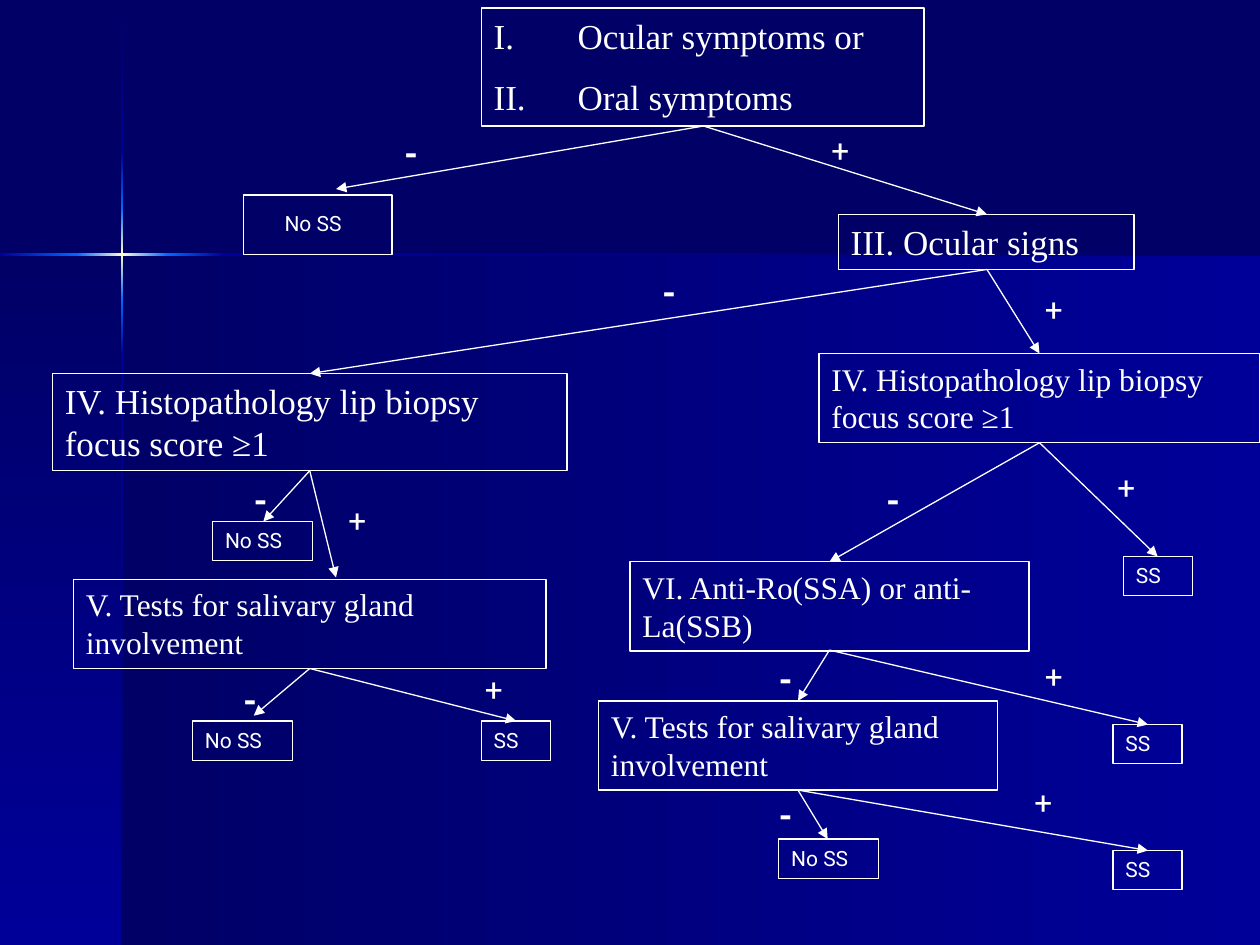
from itertools import pairwise

from lxml.etree import SubElement
from pptx import Presentation
from pptx.dml.color import RGBColor
from pptx.enum.shapes import MSO_CONNECTOR, MSO_SHAPE
from pptx.enum.text import MSO_ANCHOR, PP_ALIGN
from pptx.oxml.ns import qn
from pptx.util import Pt

WHITE = RGBColor(0xFF, 0xFF, 0xFF)
NAVY = RGBColor(0x00, 0x00, 0x66)
BLUE = RGBColor(0x00, 0x00, 0x99)
AZURE = RGBColor(0x00, 0x66, 0xFF)
CREAM = RGBColor(0xFF, 0xFF, 0xCC)

SERIF = "Times New Roman"
SANS = "Roboto"

RIGHTWARD = 0
DOWNWARD = 270
BEAM_WIDTH = 1.4
VERTICAL_BEAM = [
    (0.7, NAVY), (87, BLUE), (119, AZURE), (145, CREAM),
    (171.5, AZURE), (203, BLUE), (540, NAVY),
]
HORIZONTAL_BEAM = [
    (0, BLUE), (44, AZURE), (70, CREAM),
    (96, AZURE), (127.5, BLUE), (720, NAVY),
]

CRITERIA = [
    ("III. Ocular signs", 20, (479, 122.5, 169, 31.5)),
    ("IV. Histopathology lip biopsy focus score ≥1", 18, (468, 202, 252, 51)),
    ("IV. Histopathology lip biopsy focus score ≥1", 20, (30, 213.5, 294, 55.5)),
    ("V. Tests for salivary gland involvement", 18, (42, 331, 270, 51)),
    ("VI. Anti-Ro(SSA) or anti-La(SSB)", 18, (360, 321, 228, 51)),
    ("V. Tests for salivary gland involvement", 18, (342, 400.5, 228, 51)),
]

OUTCOMES = [
    ("SS", 39.5, [(642, 318), (636, 414), (636, 486), (275, 412)]),
    ("No SS", 57, [(121.5, 298), (445, 479.5), (110, 412)]),
]

BRANCHES = [
    ((402, 72), (192, 108), (564, 122.5), (224, 71.5), (468, 71.5)),
    ((564, 154), (177, 213.5), (594, 202), (371.5, 151), (590, 162)),
    ((177, 269), (150.5, 298), (192, 330), (138, 270), (192, 283)),
    ((594, 253), (474, 321), (661.5, 318), (499.5, 270), (631.5, 264)),
    ((474, 371.5), (456, 400.5), (656, 414), (438, 372), (590, 372)),
    ((456, 451.5), (473, 479.5), (656, 486), (438, 450), (584, 444)),
    ((177, 382), (145, 409), (295, 412), (132, 384), (270, 379.5)),
]


def add_gradient(slide, frame, colors, angle):
    """Add a borderless rectangle blending two colours."""
    shape = slide.shapes.add_shape(MSO_SHAPE.RECTANGLE, *map(Pt, frame))
    shape.shadow.inherit = False
    shape.line.fill.background()
    shape.fill.gradient()
    shape.fill.gradient_angle = angle
    for stop, color in zip(shape.fill.gradient_stops, colors):
        stop.color.rgb = color


def add_backdrop(slide):
    """Add the blue panels and the two crossing beams of light."""
    slide.background.fill.solid()
    slide.background.fill.fore_color.rgb = NAVY
    add_gradient(slide, (69.8, 145.4, 650.2, 394.6), (NAVY, BLUE), RIGHTWARD)
    add_gradient(slide, (0, 145.4, 69.8, 394.6), (NAVY, BLUE), DOWNWARD)
    for (top, first), (bottom, last) in pairwise(VERTICAL_BEAM):
        frame = (69.1, top, BEAM_WIDTH, bottom - top)
        add_gradient(slide, frame, (first, last), DOWNWARD)
    for (left, first), (right, last) in pairwise(HORIZONTAL_BEAM):
        frame = (left, 144.7, right - left, BEAM_WIDTH)
        add_gradient(slide, frame, (first, last), RIGHTWARD)


def write_text(shape, text, size, font, bold=False):
    """Fill a shape with white, left-aligned text."""
    frame = shape.text_frame
    frame.word_wrap = True
    frame.vertical_anchor = MSO_ANCHOR.TOP
    frame.text = text
    for paragraph in frame.paragraphs:
        paragraph.alignment = PP_ALIGN.LEFT
        for run in paragraph.runs:
            run.font.size = Pt(size)
            run.font.name = font
            run.font.bold = bold
            run.font.color.rgb = WHITE


def add_box(slide, frame):
    """Add an unfilled rectangle with a thin white outline."""
    shape = slide.shapes.add_shape(MSO_SHAPE.RECTANGLE, *map(Pt, frame))
    shape.shadow.inherit = False
    shape.fill.background()
    shape.line.color.rgb = WHITE
    shape.line.width = Pt(0.75)
    return shape


def add_label(slide, text, frame, size, bold=False):
    """Add a borderless text label."""
    label = slide.shapes.add_textbox(*map(Pt, frame))
    write_text(label, text, size, SANS, bold)


def add_symptoms(slide):
    """Add the starting box with its Roman-numbered symptoms."""
    box = add_box(slide, (275, 4.5, 253, 67.5))
    write_text(box, "Ocular symptoms or\nOral symptoms", 20, SERIF)
    for paragraph in box.text_frame.paragraphs:
        properties = paragraph._p.get_or_add_pPr()
        properties.set("marL", str(Pt(48)))
        properties.set("indent", str(-Pt(48)))
        SubElement(properties, qn("a:buFont"), typeface=SERIF)
        SubElement(properties, qn("a:buAutoNum"), type="romanUcPeriod")
    box.text_frame.paragraphs[1].space_before = Pt(11)


def add_arrow(slide, start, end):
    """Add a thin white arrow between two points."""
    arrow = slide.shapes.add_connector(
        MSO_CONNECTOR.STRAIGHT, *map(Pt, start + end)
    )
    arrow.line.color.rgb = WHITE
    arrow.line.width = Pt(0.75)
    properties = arrow.element.spPr
    SubElement(properties.find(qn("a:ln")), qn("a:tailEnd"), type="triangle")
    SubElement(properties, qn("a:effectLst"))


def add_branch(slide, start, negative, positive, minus, plus):
    """Add the negative and positive arrows of a decision with their signs."""
    add_arrow(slide, start, negative)
    add_arrow(slide, start, positive)
    add_label(slide, "-", minus + (22.5, 31.5), 20, bold=True)
    add_label(slide, "+", plus + (28, 29), 18)


def main():
    """Build the diagnostic decision tree."""
    presentation = Presentation()
    presentation.slide_width = Pt(720)
    presentation.slide_height = Pt(540)
    slide = presentation.slides.add_slide(presentation.slide_layouts[6])
    add_backdrop(slide)
    add_symptoms(slide)
    for text, size, frame in CRITERIA:
        write_text(add_box(slide, frame), text, size, SERIF)
    for text, width, corners in OUTCOMES:
        for corner in corners:
            write_text(add_box(slide, corner + (width, 22.5)), text, 12, SANS)
    for branch in BRANCHES:
        add_branch(slide, *branch)
    add_box(slide, (139, 111.5, 85, 34))
    add_label(slide, "No SS", (155.5, 116.5, 57, 21.5), 12)
    presentation.save("out.pptx")


if __name__ == "__main__":
    main()
